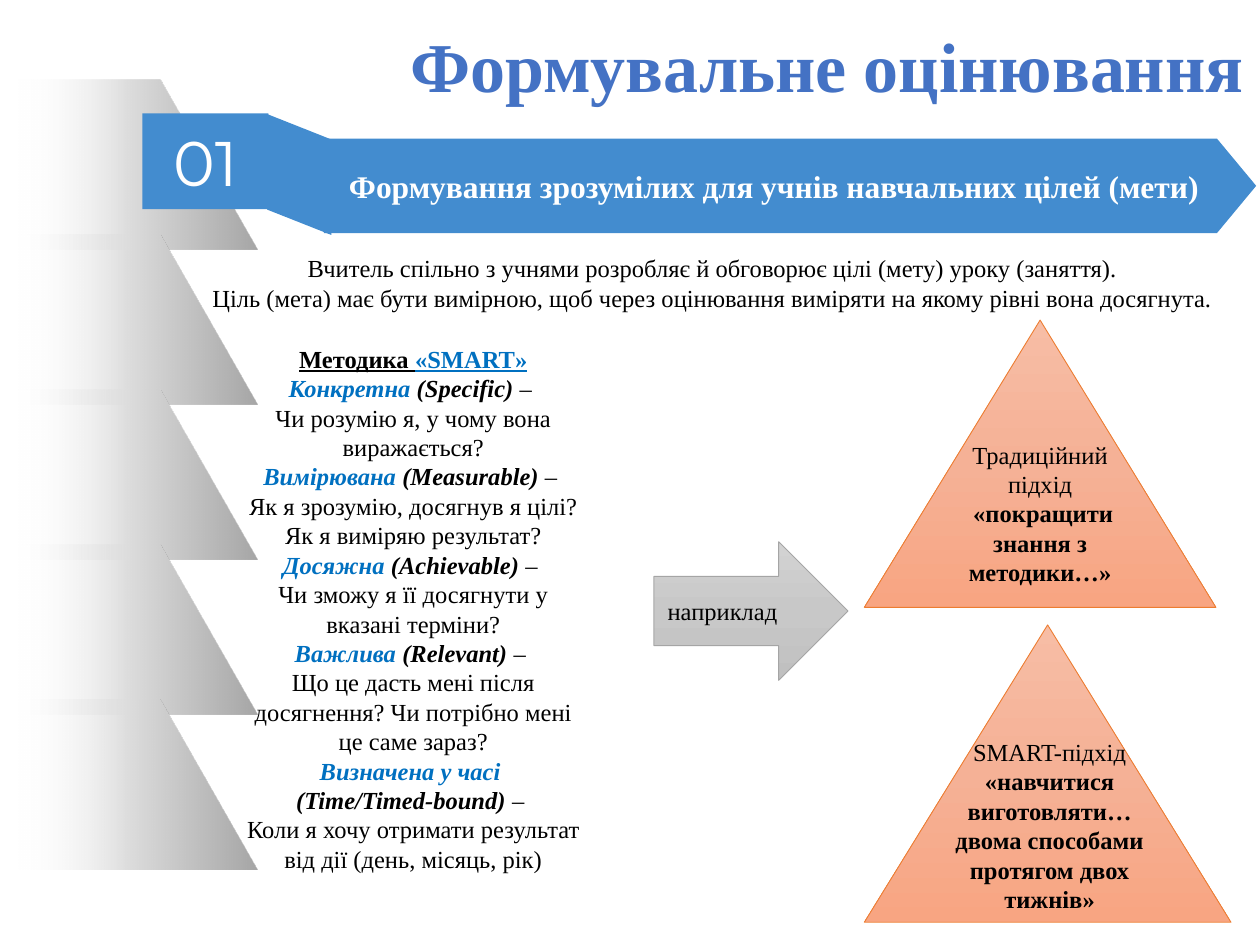
from dataclasses import dataclass
from typing import Optional

from pptx import Presentation
from pptx.dml.color import RGBColor
from pptx.enum.shapes import MSO_SHAPE as Preset
from pptx.enum.text import MSO_ANCHOR as Anchor, MSO_AUTO_SIZE as AutoSize, PP_ALIGN as Align
from pptx.oxml import parse_xml
from pptx.oxml.ns import nsdecls
from pptx.util import Inches, Pt

# The page is a grid of 100 columns by 75 rows; all places are in cells.
COLUMNS, ROWS = 100, 75
CELL = Inches(10) // COLUMNS
SERIF = "Times New Roman"
COLORS = {
    "ribbon": "438CCF", "title": "4472C4", "term": "0070C0",
    "white": "FFFFFF", "black": "000000",
    "triangle_edge": "ED7D31", "arrow_edge": "A5A5A5",
}


def to_emu(*cells: float) -> list[int]:
    return [round(cell * CELL) for cell in cells]


@dataclass(frozen=True)
class Place:
    left: float
    top: float
    width: float
    height: float

    def emu(self) -> list[int]:
        return to_emu(self.left, self.top, self.width, self.height)


@dataclass(frozen=True)
class Stop:
    percent: int
    color: str
    clear: bool = False


@dataclass(frozen=True)
class Gradient:
    angle: int
    stops: tuple[Stop, ...]


@dataclass(frozen=True)
class Span:
    text: str
    color: str = "black"
    bold: bool = False
    italic: bool = False
    underline: bool = False
    size: float = 14
    name: str = SERIF


@dataclass(frozen=True)
class Figure:
    preset: Preset
    place: Place
    gradient: Optional[Gradient] = None
    edge: Optional[str] = None
    adjust: Optional[float] = None
    rotation: float = 0


Paras = list[list[Span]]

TAB_FADE = Gradient(180, (Stop(0, "A6A6A6"), Stop(50, "DDDDDD"),
                          Stop(93, "FFFFFF", True), Stop(100, "FFFFFF", True)))
PEACH = Gradient(90, (Stop(0, "F7BDA5"), Stop(50, "F5B196"), Stop(100, "F8A582")))
GREY = Gradient(90, (Stop(0, "D2D2D2"), Stop(50, "C8C8C8"), Stop(100, "C0C0C0")))

TAB_COUNT, TAB_TOP, TAB_STEP, TAB_HEIGHT = 5, 6.3, 12.3, 13.5
TAB_SHOULDER, TAB_WIDTH = 12.7, 20.4

NUMBER = Figure(Preset.RECTANGLE, Place(11.3, 9, 10, 7.6))
BANNER = Figure(Preset.PENTAGON, Place(25.7, 11, 74, 7.5), adjust=0.415)
FOLD = Figure(Preset.PARALLELOGRAM, Place(18.95, 11.3, 9.6, 5.1), adjust=0.396, rotation=270)
TRADITIONAL = Figure(Preset.ISOSCELES_TRIANGLE, Place(68.6, 25.4, 27.9, 22.8), PEACH, "triangle_edge")
ARROW = Figure(Preset.RIGHT_ARROW, Place(51.9, 43, 15.4, 11), GREY, "arrow_edge")
SMART = Figure(Preset.ISOSCELES_TRIANGLE, Place(68.6, 49.6, 29.1, 23.6), PEACH, "triangle_edge")


def paint_gradient(shape, gradient: Gradient) -> None:
    stops = "".join(
        f'<a:gs pos="{stop.percent * 1000}"><a:srgbClr val="{stop.color}">'
        + ('<a:alpha val="0"/>' if stop.clear else "") + "</a:srgbClr></a:gs>"
        for stop in gradient.stops)
    shape.fill.background()
    properties = shape._element.spPr
    blank = properties.find("{*}noFill")
    properties.replace(blank, parse_xml(
        f'<a:gradFill {nsdecls("a")} rotWithShape="1"><a:gsLst>{stops}</a:gsLst>'
        f'<a:lin ang="{gradient.angle * 60000}" scaled="0"/></a:gradFill>'))


def dress(shape, gradient: Optional[Gradient], edge: Optional[str] = None) -> None:
    """Set shadow, fill and outline; without a gradient the fill is ribbon blue."""
    shape.shadow.inherit = False
    if gradient:
        paint_gradient(shape, gradient)
    else:
        shape.fill.solid()
        shape.fill.fore_color.rgb = RGBColor.from_string(COLORS["ribbon"])
    if edge:
        shape.line.color.rgb = RGBColor.from_string(COLORS[edge])
        shape.line.width = Pt(0.5)
    else:
        shape.line.fill.background()


def draw_tab(page, row: int) -> None:
    top = TAB_TOP + row * TAB_STEP
    bottom = top + TAB_HEIGHT
    builder = page.shapes.build_freeform(*to_emu(0, top))
    corners = ((TAB_SHOULDER, top), (TAB_WIDTH, bottom), (0, bottom))
    builder.add_line_segments([to_emu(*corner) for corner in corners], close=True)
    dress(builder.convert_to_shape(), TAB_FADE)


def draw_figure(page, figure: Figure):
    shape = page.shapes.add_shape(figure.preset, *figure.place.emu())
    if figure.adjust is not None:
        shape.adjustments[0] = figure.adjust
    shape.rotation = figure.rotation
    dress(shape, figure.gradient, figure.edge)
    return shape


def write(shape, paras: Paras, align: Align = Align.CENTER, **frame_format) -> None:
    frame = shape.text_frame
    for key, value in {"word_wrap": True, **frame_format}.items():
        setattr(frame, key, value)
    for index, spans in enumerate(paras):
        para = frame.add_paragraph() if index else frame.paragraphs[0]
        para.alignment = align
        for span in spans:
            for number, line in enumerate(span.text.split("\n")):
                if number:
                    para.add_line_break()
                run = para.add_run()
                run.text = line
                for key in ("bold", "italic", "underline", "name"):
                    setattr(run.font, key, getattr(span, key))
                run.font.size = Pt(span.size)
                run.font.color.rgb = RGBColor.from_string(COLORS[span.color])


def add_text(page, place: Place, paras: Paras, align: Align = Align.CENTER, **frame_format) -> None:
    box = page.shapes.add_textbox(*place.emu())
    write(box, paras, align, **{"auto_size": AutoSize.SHAPE_TO_FIT_TEXT, **frame_format})


def criterion(term: str, english: str, question: str, split: bool = False) -> Paras:
    """A SMART term and its question; split puts the English name on its own line."""
    head = [Span(term + " ", "term", bold=True, italic=True)]
    tail = [Span(f"({english}) ", bold=True, italic=True), Span("– ")]
    return ([head, tail] if split else [head + tail]) + [[Span(question)]]


METHOD: Paras = [
    [Span("Методика ", bold=True, underline=True),
     Span("«SMART»", "term", bold=True, underline=True)],
    *criterion("Конкретна", "Specific", "Чи розумію я, у чому вона виражається?"),
    *criterion("Вимірювана", "Measurable",
               "Як я зрозумію, досягнув я цілі? Як я виміряю результат?"),
    *criterion("Досяжна", "Achievable", "Чи зможу я її досягнути у вказані терміни?"),
    *criterion("Важлива", "Relevant",
               "Що це дасть мені після досягнення? Чи потрібно мені це саме зараз?"),
    *criterion("Визначена у часі", "Time/Timed-bound",
               "Коли я хочу отримати результат від дії (день, місяць, рік)", split=True),
]


def main() -> None:
    deck = Presentation()
    deck.slide_width, deck.slide_height = COLUMNS * CELL, ROWS * CELL
    page = deck.slides.add_slide(deck.slide_layouts[6])

    draw_tab(page, 0)
    write(draw_figure(page, NUMBER), [[Span("01", "white", size=36, name="Montserrat")]],
          vertical_anchor=Anchor.MIDDLE)
    write(draw_figure(page, BANNER),
          [[Span("Формування зрозумілих для учнів навчальних цілей (мети)",
                 "white", bold=True, size=18)]],
          Align.JUSTIFY, vertical_anchor=Anchor.MIDDLE,
          margin_left=2 * CELL, margin_right=2 * CELL)
    draw_figure(page, FOLD)
    for row in range(1, TAB_COUNT):
        draw_tab(page, row)

    add_text(page, Place(9.7, 1.2, 90, 7.9),
             [[Span("Формувальне оцінювання", "title", bold=True, size=40)]],
             Align.RIGHT, vertical_anchor=Anchor.MIDDLE, auto_size=AutoSize.NONE)
    add_text(page, Place(15.3, 19.6, 82.5, 5.7), [[Span(
        "Вчитель спільно з учнями розробляє й обговорює цілі (мету) уроку (заняття).\n"
        "Ціль (мета) має бути вимірною, щоб через оцінювання виміряти на якому рівні вона досягнута.")]])
    add_text(page, Place(18.2, 26.8, 29.2, 43.4), METHOD)

    draw_figure(page, TRADITIONAL)
    draw_figure(page, ARROW)
    add_text(page, Place(52, 46.8, 10.8, 3.4), [[Span("наприклад")]], Align.LEFT)
    add_text(page, Place(73.6, 34.4, 17.9, 12.8), [
        [Span("Традиційний підхід")],
        [Span(" "), Span("«покращити знання з методики…»", bold=True)]])
    draw_figure(page, SMART)
    add_text(page, Place(73.4, 58, 19.8, 15.1), [
        [Span("SMART-підхід "), Span("«навчитися виготовляти…", bold=True)],
        [Span("двома способами протягом двох тижнів»", bold=True)]])

    deck.save("out.pptx")


if __name__ == "__main__":
    main()
